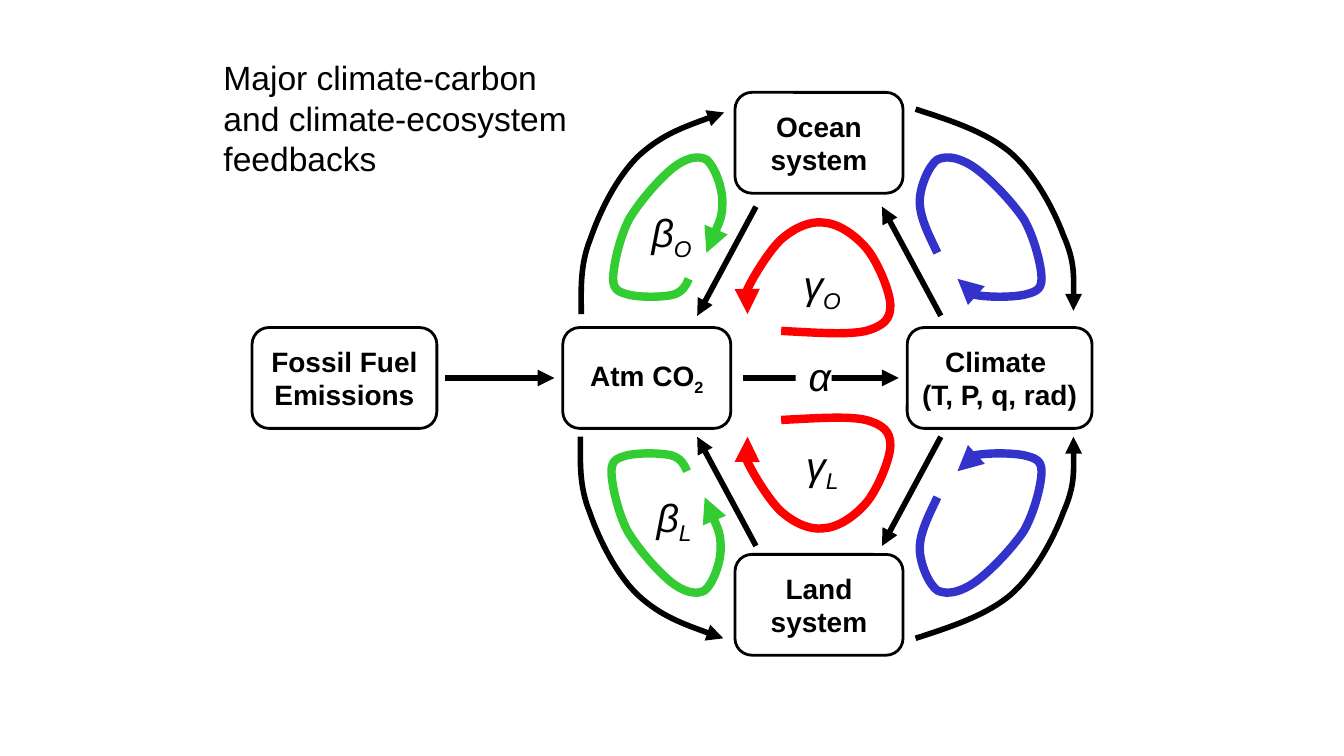
from lxml import etree
from pptx import Presentation
from pptx import util as u
from pptx.dml.color import RGBColor
from pptx.enum import shapes, text
from pptx.oxml.ns import qn

SCALE = 5715  # EMU per px, 160 px to the inch
BLACK = RGBColor(0x00, 0x00, 0x00)
WHITE = RGBColor(0xFF, 0xFF, 0xFF)
GREEN = RGBColor(0x33, 0xCC, 0x33)
BLUE = RGBColor(0x33, 0x33, 0xCC)
RED = RGBColor(0xFF, 0x00, 0x00)

TITLE = {"name": "Arial", "size": u.Pt(18), "bold": False}
NODE = {"name": "Arial", "size": u.Pt(15), "bold": True}
SYMBOL = {"name": "Arial", "size": u.Pt(21), "italic": True}

# Outlines in free units, later fitted to bounds:
# a start point, then three points for each Bezier curve
ARC = [(431, 325), (431, 343), (430, 361), (438, 381), (445, 401),
       (458, 428), (475, 444), (492, 459), (515, 467), (538, 475)]
SIDE_LOOP = [(511, 351), (509, 346), (506, 341), (499, 339), (491, 337),
             (475, 337), (467, 339), (460, 341), (455, 342), (455, 351),
             (455, 361), (460, 382), (467, 395), (475, 409), (489, 425),
             (499, 433), (508, 440), (517, 443), (524, 439), (530, 435),
             (536, 419), (536, 408), (536, 396), (530, 383), (524, 370)]
INNER_LOOP = [(581, 312), (606, 311), (630, 309), (644, 312), (657, 316),
              (662, 321), (662, 331), (662, 342), (652, 365), (644, 375),
              (635, 385), (623, 393), (612, 394), (602, 395), (591, 390),
              (581, 381), (572, 373), (560, 353), (556, 344), (552, 334),
              (554, 330), (556, 325)]


def emu(*lengths):
    return [u.Emu(length * SCALE) for length in lengths]


def write(frame, paragraphs, style, align=text.PP_ALIGN.LEFT):
    """Fill a frame; each paragraph is a (words, subscript) pair."""
    for index, parts in enumerate(paragraphs):
        para = frame.add_paragraph() if index else frame.paragraphs[0]
        para.alignment = align
        for words, baseline in zip(parts, (None, "-25000")):
            if not words:
                continue
            span = para.add_run()
            span.text = words
            for name, value in style.items():
                setattr(span.font, name, value)
            span.font.color.rgb = BLACK
            if baseline:
                span.font._element.set("baseline", baseline)


def add_title(page, words, bounds):
    title = page.shapes.title
    title.left, title.top, title.width, title.height = emu(*bounds)
    frame = title.text_frame
    frame.word_wrap = True
    frame.auto_size = text.MSO_AUTO_SIZE.NONE
    frame.vertical_anchor = text.MSO_ANCHOR.TOP
    write(frame, [(words, "")], TITLE)


def add_node(page, bounds, paragraphs, wrap):
    node = page.shapes.add_shape(shapes.MSO_SHAPE.ROUNDED_RECTANGLE, *emu(*bounds))
    node.shadow.inherit = False
    node.fill.background()
    node.line.color.rgb = BLACK
    node.line.width = u.Pt(1.5)
    frame = node.text_frame
    frame.word_wrap = wrap
    frame.vertical_anchor = text.MSO_ANCHOR.MIDDLE
    write(frame, paragraphs, NODE, text.PP_ALIGN.CENTER)


def add_symbol(page, bounds, letter, subscript="", fill=None):
    box = page.shapes.add_textbox(*emu(*bounds))
    box.text_frame.word_wrap = True
    if fill is not None:
        box.fill.solid()
        box.fill.fore_color.rgb = fill
    write(box.text_frame, [(letter, subscript)], SYMBOL)


def point_arrow(shape, color, weight):
    """Style a line and put a triangle at its end."""
    shape.line.color.rgb = color
    shape.line.width = u.Pt(weight)
    etree.SubElement(shape.line._get_or_add_ln(), qn("a:tailEnd"), type="triangle")


def add_arrow(page, start, end):
    arrow = page.shapes.add_connector(
        shapes.MSO_CONNECTOR.STRAIGHT, *emu(*start, *end))
    point_arrow(arrow, BLACK, 3)
    etree.SubElement(arrow._element.spPr, qn("a:effectLst"))


def fit(points, bounds, flip_x, flip_y):
    """Scale points into bounds, mirrored; a left-right mirror also reverses flow."""
    axes = []
    for values, start, length, flip in zip(
            zip(*points), bounds[:2], bounds[2:], (flip_x, flip_y)):
        low, high = min(values), max(values)
        shares = [(value - low) / (high - low) for value in values]
        axes.append([round(start + length * (1 - share if flip else share))
                     for share in shares])
    placed = list(zip(*axes))
    return placed[::-1] if flip_x else placed


def add_curve(page, points, color, weight):
    builder = page.shapes.build_freeform(*points[0], scale=SCALE)
    builder.add_line_segments(points[1:], close=False)
    curve = builder.convert_to_shape()
    # Join each three straight segments into one Bezier curve
    segments = list(curve._element.iter(qn("a:lnTo")))
    for first in range(0, len(segments), 3):
        bezier = etree.SubElement(segments[first].getparent(), qn("a:cubicBezTo"))
        for segment in segments[first:first + 3]:
            bezier.append(segment[0])
            segment.getparent().remove(segment)
    curve.shadow.inherit = False
    curve.fill.background()
    point_arrow(curve, color, weight)


def main():
    deck = Presentation()
    deck.slide_width, deck.slide_height = emu(1600, 900)
    page = deck.slides.add_slide(deck.slide_layouts[5])
    add_title(page, "Major climate-carbon and climate-ecosystem feedbacks",
              (250, 60, 450, 162))

    # Systems
    for left, top, width, paragraphs, wrap in (
            (300, 390, 220, [("Fossil Fuel Emissions", "")], True),
            (670, 390, 200, [("Atm CO", "2")], False),
            (1080, 390, 220, [("Climate ", ""), ("(T, P, q, rad)", "")], False),
            (875, 110, 200, [("Ocean system", "")], True),
            (875, 660, 200, [("Land system", "")], True)):
        add_node(page, (left, top, width, 120), paragraphs, wrap)

    # Straight flows
    for start, end in (((900, 650), (830, 520)), ((900, 246), (830, 376)),
                       ((1120, 520), (1050, 650)), ((1120, 376), (1050, 246)),
                       ((530, 450), (660, 450)), ((885, 450), (1070, 450))):
        add_arrow(page, start, end)

    # Outer arcs and feedback loops
    for points, color, weight, bounds, flip_x, flip_y in (
            (ARC, BLACK, 3, (689, 520, 172, 240), False, False),
            (ARC, BLACK, 3, (690, 134, 172, 240), False, True),
            (ARC, BLACK, 3, (1090, 520, 190, 240), True, False),
            (ARC, BLACK, 3, (1090, 130, 190, 240), True, True),
            (SIDE_LOOP, GREEN, 4.5, (728, 539, 130, 170), False, False),
            (SIDE_LOOP, GREEN, 4.5, (730, 184, 130, 170), False, True),
            (SIDE_LOOP, BLUE, 4.5, (1095, 539, 145, 170), True, False),
            (SIDE_LOOP, BLUE, 4.5, (1095, 184, 145, 170), True, True),
            (INNER_LOOP, RED, 4.5, (884, 495, 176, 136), False, False),
            (INNER_LOOP, RED, 4.5, (884, 263, 176, 136), False, True)):
        add_curve(page, fit(points, bounds, flip_x, flip_y), color, weight)

    # Feedback symbols
    add_symbol(page, (947, 411, 43, 72), "α", fill=WHITE)
    for left, top, width, letter, subscript in (
            (766, 579, 94, "β", "L"), (760, 240, 83, "β", "O"),
            (944, 517, 74, "γ", "L"), (941, 302, 90, "γ", "O")):
        add_symbol(page, (left, top, width, 72), letter, subscript)

    deck.save("out.pptx")


if __name__ == "__main__":
    main()
